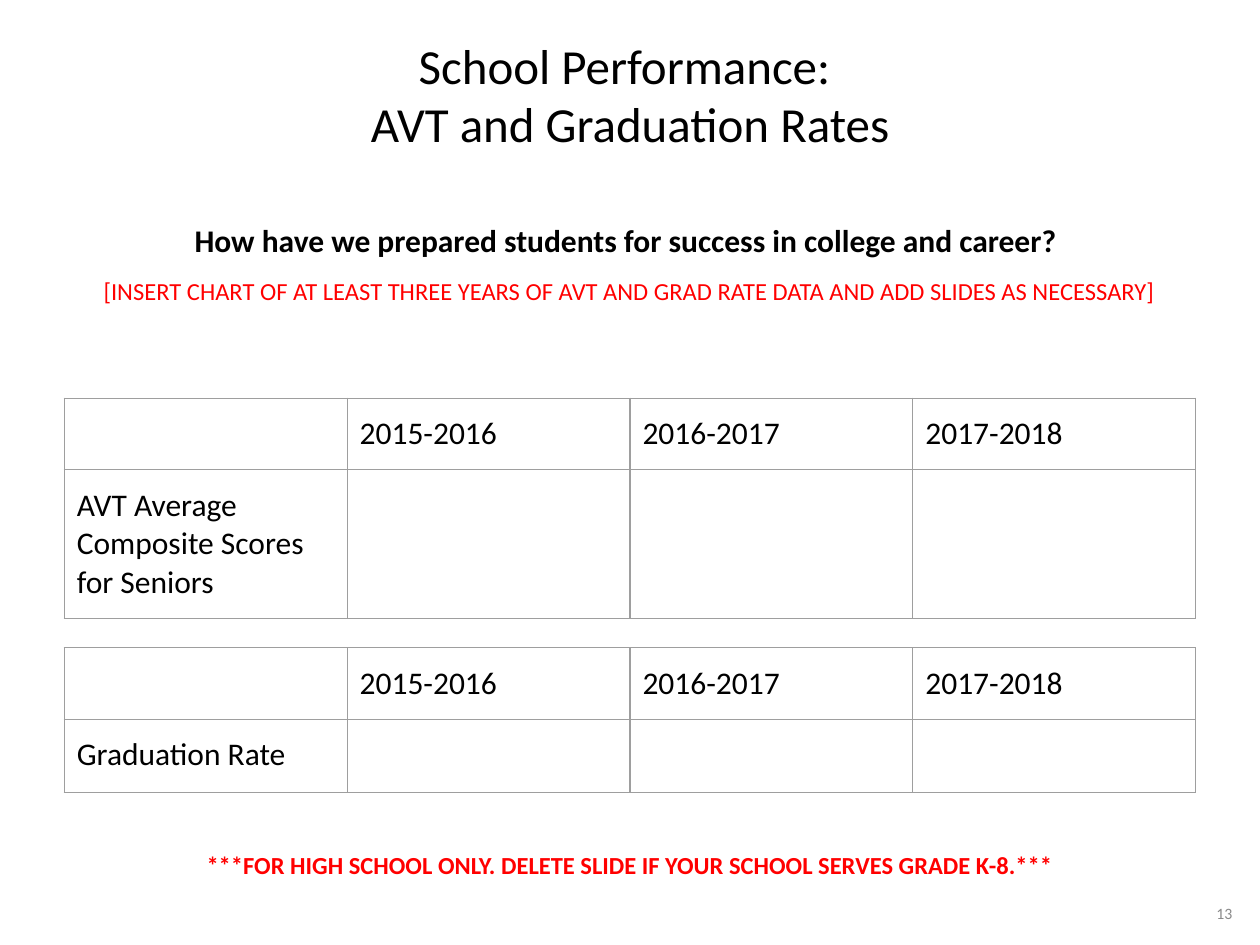
from lxml.etree import SubElement
from pptx import Presentation
from pptx.dml.color import RGBColor
from pptx.enum.text import MSO_ANCHOR, MSO_AUTO_SIZE, PP_ALIGN
from pptx.oxml.ns import qn
from pptx.util import Inches, Pt

BLACK, RED, GRAY, BORDER = "000000", "FF0000", "8A8A8A", "9E9E9E"
YEARS = ["2015-2016", "2016-2017", "2017-2018"]


def color(hex_code):
    return RGBColor.from_string(hex_code)


class SlideBuilder:
    font = "Calibri"
    cell_size = 18
    border_width = Pt(0.75)

    def __init__(self, slide):
        self.slide = slide

    def style(self, paragraph, size, hex_code, bold=False, align=PP_ALIGN.CENTER):
        paragraph.alignment = align
        for run in paragraph.runs:
            run.font.name = self.font
            run.font.size = Pt(size)
            run.font.bold = bold
            run.font.color.rgb = color(hex_code)

    def place(self, shape, left, top, width, height):
        shape.left, shape.top = Inches(left), Inches(top)
        shape.width, shape.height = Inches(width), Inches(height)

    def frame(self, shape, text, anchor, inset_y=0.1):
        frame = shape.text_frame
        frame.text = text
        frame.word_wrap = True
        frame.auto_size = MSO_AUTO_SIZE.NONE
        frame.vertical_anchor = anchor
        frame.margin_left = frame.margin_right = Inches(0.1)
        frame.margin_top = frame.margin_bottom = Inches(inset_y)
        return frame

    def title(self, text, *box):
        heading = self.slide.shapes.title
        self.place(heading, *box)
        for paragraph in self.frame(heading, text, MSO_ANCHOR.MIDDLE).paragraphs:
            self.style(paragraph, 28, BLACK)

    def body(self, question, instruction, *box):
        prompt = self.slide.placeholders[1]
        self.place(prompt, *box)
        frame = self.frame(prompt, f"{question}\n{instruction}", MSO_ANCHOR.TOP)
        for paragraph, space in zip(frame.paragraphs, (0, 10)):
            paragraph.space_before = Pt(space)
            properties = paragraph._p.get_or_add_pPr()
            properties.set("marL", "0")
            properties.set("indent", "0")
            SubElement(properties, qn("a:buNone"))
        self.style(frame.paragraphs[0], 18, BLACK, bold=True)
        self.style(frame.paragraphs[1], 14, RED)

    def note(self, text, box, size, hex_code, bold=False, align=PP_ALIGN.CENTER,
             anchor=MSO_ANCHOR.TOP, inset_y=0.1):
        note = self.slide.shapes.add_textbox(*map(Inches, box))
        frame = self.frame(note, text, anchor, inset_y)
        self.style(frame.paragraphs[0], size, hex_code, bold, align)

    def border(self, cell):
        properties = cell._tc.get_or_add_tcPr()
        for side in ("a:lnL", "a:lnR", "a:lnT", "a:lnB"):
            line = SubElement(properties, qn(side), w=str(self.border_width))
            fill = SubElement(line, qn("a:solidFill"))
            SubElement(fill, qn("a:srgbClr"), val=BORDER)

    def year_table(self, measure, top, row_heights):
        rows = [["", *YEARS], [measure] + [""] * len(YEARS)]
        table = self.slide.shapes.add_table(
            len(rows), len(rows[0]), Inches(0.51), Inches(top),
            Inches(8.98), Inches(sum(row_heights))).table
        table.first_row = table.horz_banding = False
        for row, height, texts in zip(table.rows, row_heights, rows):
            row.height = Inches(height)
            for cell, text in zip(row.cells, texts):
                cell.text = text
                cell.margin_left = cell.margin_right = Inches(0.1)
                cell.margin_top = cell.margin_bottom = Inches(0.13)
                self.border(cell)
                cell.fill.background()
                self.style(cell.text_frame.paragraphs[0], self.cell_size, BLACK,
                           align=PP_ALIGN.LEFT)


def main():
    deck = Presentation()
    deck.slide_width, deck.slide_height = Inches(10), Inches(7.5)
    builder = SlideBuilder(deck.slides.add_slide(deck.slide_layouts[1]))

    # Heading and prompt
    builder.title("School Performance: \nAVT and Graduation Rates", 0, -0.02, 10, 1.53)
    builder.body(
        "How have we prepared students for success in college and career? ",
        "[INSERT CHART OF AT LEAST THREE YEARS OF AVT AND GRAD RATE DATA "
        "AND ADD SLIDES AS NECESSARY]",
        0.2, 1.65, 9.59, 1.41)

    # Results by school year
    builder.year_table("AVT Average Composite Scores for Seniors", 3.16, (0.57, 1.18))
    builder.year_table("Graduation Rate", 5.14, (0.57, 0.58))

    # Reminder and page number
    builder.note(
        "***FOR HIGH SCHOOL ONLY. DELETE SLIDE IF YOUR SCHOOL SERVES GRADE K-8.***",
        (0.83, 6.65, 8.34, 0.44), 14, RED, bold=True)
    builder.note("13", (7.44, 7, 2.44, 0.5), 9, GRAY, align=PP_ALIGN.RIGHT,
                 anchor=MSO_ANCHOR.MIDDLE, inset_y=0.05)

    deck.save("out.pptx")


if __name__ == "__main__":
    main()
